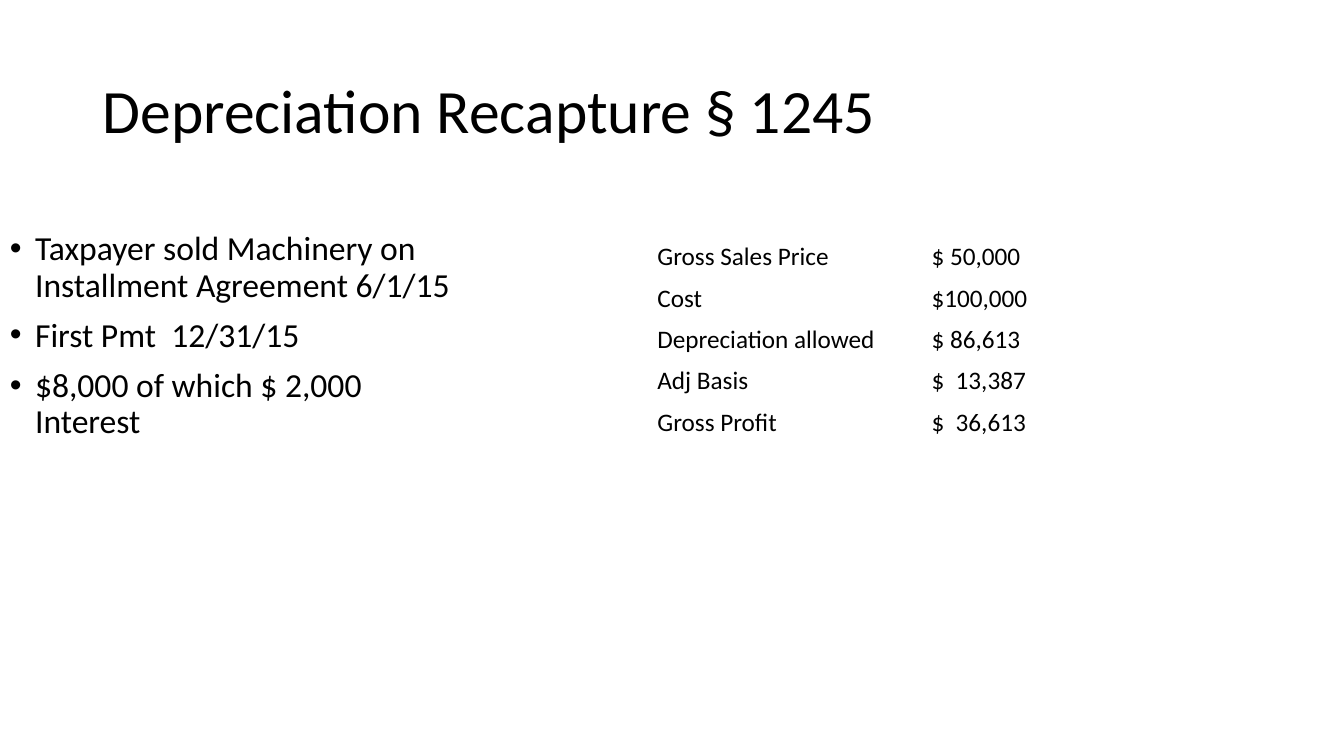
from lxml import etree
from pptx import Presentation
from pptx.dml.color import RGBColor
from pptx.enum.text import MSO_ANCHOR
from pptx.oxml.ns import qn
from pptx.util import Inches, Pt

MIDDLE = MSO_ANCHOR.MIDDLE
TOP = MSO_ANCHOR.TOP
SLIDE_W, SLIDE_H = 13.33, 7.5
FONT = "Calibri"
COLORS = {"text": "000000"}

TITLE = "Depreciation Recapture § 1245"
FACTS = [
    "Taxpayer sold Machinery on Installment Agreement 6/1/15",
    "First Pmt  12/31/15",
    "$8,000 of which $ 2,000 Interest",
]
FIGURES = [
    ("Gross Sales Price", "$ 50,000"),
    ("Cost", "$100,000"),
    ("Depreciation allowed", "$ 86,613"),
    ("Adj Basis", "$  13,387"),
    ("Gross Profit", "$  36,613"),
]
COLUMN_W, ROW_H = 2.72, 0.41


def style_runs(paragraph, size):
    for run in paragraph.runs:
        run.font.name = FONT
        run.font.size = Pt(size)
        run.font.color.rgb = RGBColor.from_string(COLORS["text"])


def add_bullet(paragraph, indent=0.25):
    properties = paragraph._p.get_or_add_pPr()
    properties.set("marL", str(Inches(indent)))
    properties.set("indent", str(-Inches(indent)))
    etree.SubElement(properties, qn("a:buFont"), typeface="Arial")
    etree.SubElement(properties, qn("a:buChar"), char="•")


def add_text(slide, box, lines, size, anchor=TOP, bulleted=False):
    frame = slide.shapes.add_textbox(*map(Inches, box)).text_frame
    frame.word_wrap = True
    frame.vertical_anchor = anchor
    frame.text = "\n".join(lines)
    for paragraph in frame.paragraphs:
        paragraph.line_spacing = 0.9
        if bulleted:
            paragraph.space_before = Pt(10)
            add_bullet(paragraph)
        style_runs(paragraph, size)


def add_figures(slide, left, top, figures, size):
    rows, columns = len(figures), len(figures[0])
    table = slide.shapes.add_table(
        rows, columns, Inches(left), Inches(top),
        Inches(columns * COLUMN_W), Inches(rows * ROW_H)).table
    table.first_row = False
    table.horz_banding = False
    for row, values in enumerate(figures):
        for column, value in enumerate(values):
            cell = table.cell(row, column)
            cell.fill.background()
            cell.text_frame.text = value
            style_runs(cell.text_frame.paragraphs[0], size)


def main():
    presentation = Presentation()
    presentation.slide_width = Inches(SLIDE_W)
    presentation.slide_height = Inches(SLIDE_H)
    slide = presentation.slides.add_slide(presentation.slide_layouts[6])

    # Title
    add_text(slide, (0.92, 0.4, 11.5, 1.45), [TITLE], 44, anchor=MIDDLE)
    # Facts of the sale
    add_text(slide, (0, 0.3 * SLIDE_H, 4.57, 4.17), FACTS, 24, bulleted=True)
    # Gross profit computation
    add_figures(slide, 6.42, 2.35, FIGURES, 18)

    presentation.save("out.pptx")


if __name__ == "__main__":
    main()
